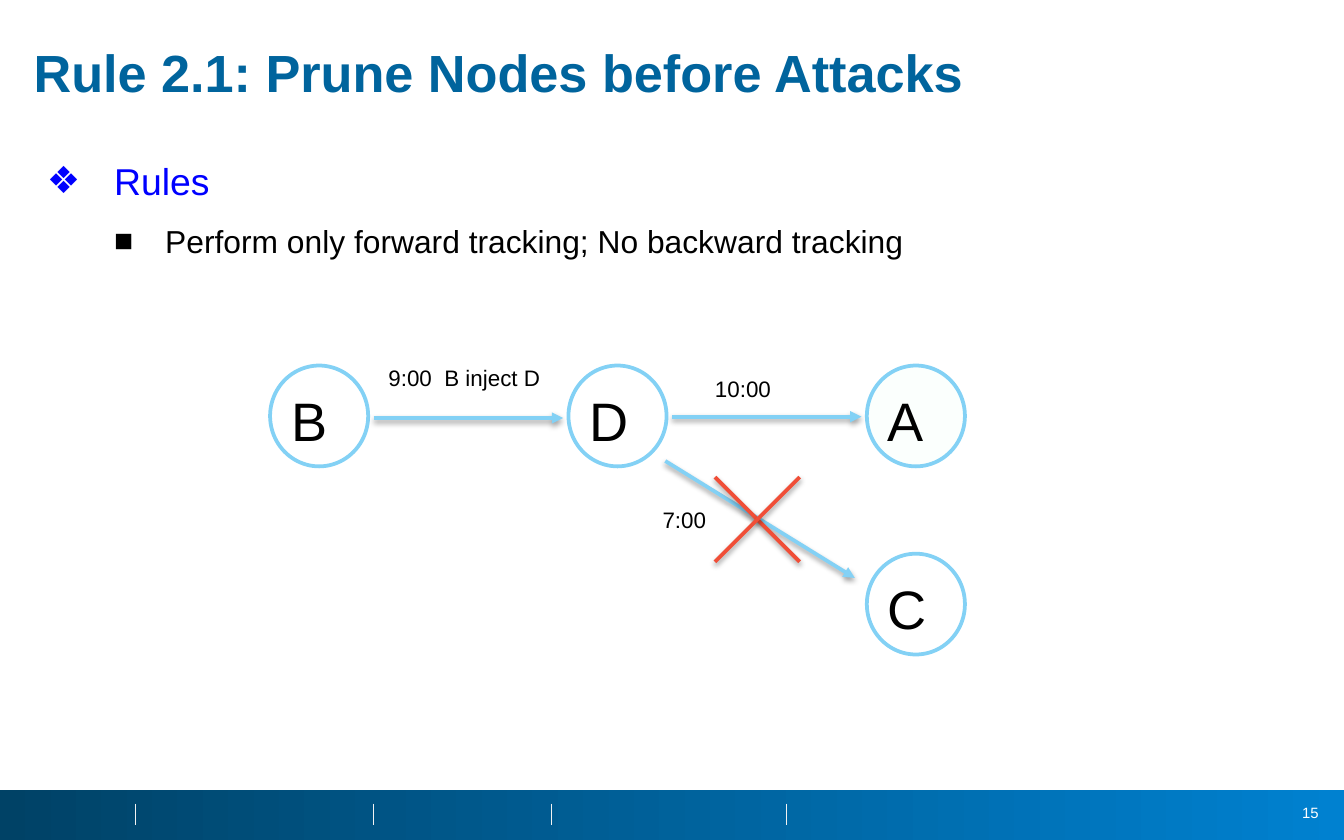
import pptx
import pptx.util
import pptx.oxml
import pptx.oxml.ns
import pptx.dml.color
import pptx.enum.dml
import pptx.enum.shapes
import pptx.enum.text
from lxml import etree

Inches = pptx.util.Inches
Pt = pptx.util.Pt
SHAPE = pptx.enum.shapes.MSO_SHAPE
ALIGN = pptx.enum.text.PP_ALIGN
ANCHOR = pptx.enum.text.MSO_ANCHOR
qn = pptx.oxml.ns.qn

# Content
TITLE = "Rule 2.1: Prune Nodes before Attacks"
PAGE = "15"
# text, level, indent, hang, size, colour, bullet
RULES = [
    ("Rules", 0, 0.5, 0.5, 20, "0000FF", "❖"),
    ("Perform only forward tracking; No backward tracking",
     1, 0.88, 0.38, 17, "000000", "■"),
]
NODES = [("B", 2.01, 2.72, "FFFFFF"), ("D", 4.23, 2.72, "FFFFFF"),
         ("A", 6.45, 2.72, "FBFFFD"), ("C", 6.45, 4.12, "FFFFFF")]
EDGES = [(2.78, 3.11, 4.19, 3.11), (5, 3.1, 6.41, 3.1),
         (4.95, 3.43, 6.36, 4.3)]
TIMES = [("9:00  B inject D", 2.84, 2.66, 1.27),
         ("10:00", 5.27, 2.74, 0.73), ("7:00", 4.88, 3.72, 0.73)]
CROSS = [(5.32, 3.55, 5.95, 4.18), (5.95, 3.55, 5.32, 4.18)]
TICKS = [1.01, 2.78, 4.1, 5.85]
SKY, RED, PALE = "83D1F5", "F04E37", "F2F2F2"
WIDE, HIGH, BAR = 10, 6.25, 5.88
NODE_W, NODE_H = 0.73, 0.75

deck = pptx.Presentation()
deck.slide_width, deck.slide_height = Inches(WIDE), Inches(HIGH)
slide = deck.slides.add_slide(deck.slide_layouts[6])
shapes = slide.shapes


def paint(target, color):
    """Give a font or a fill a solid colour."""
    if hasattr(target, "solid"):
        target.solid()
        target = target.fore_color
    else:
        target = target.color
    target.rgb = pptx.dml.color.RGBColor.from_string(color)


def write(para, text, size=12, color="000000", bold=False,
          align=ALIGN.LEFT, gap=None):
    para.text = text
    para.alignment = align
    para.line_spacing = gap
    font = para.font
    font.name, font.size, font.bold = "Arial", Pt(size), bold
    paint(font, color)


def frame(shape, inset=0.05, top=0.05, anchor=ANCHOR.TOP, wrap=True):
    body = shape.text_frame
    body.margin_left = body.margin_right = body.margin_bottom = Inches(inset)
    body.margin_top = Inches(top)
    body.vertical_anchor, body.word_wrap = anchor, wrap
    return body


def box(x, y, w, h, **style):
    shape = shapes.add_textbox(Inches(x), Inches(y), Inches(w), Inches(h))
    return frame(shape, **style)


def line(x1, y1, x2, y2, color, width=2, head=False, shade=True):
    link = shapes.add_connector(pptx.enum.shapes.MSO_CONNECTOR.STRAIGHT,
                                Inches(x1), Inches(y1), Inches(x2), Inches(y2))
    paint(link.line.fill, color)
    link.line.width = Pt(width)
    if head:
        etree.SubElement(link.line._get_or_add_ln(), qn("a:tailEnd"),
                         type="triangle")
    fx = etree.SubElement(link._element.spPr, qn("a:effectLst"))
    if shade:
        cast = etree.SubElement(fx, qn("a:outerShdw"), blurRad=str(Pt(3)),
                                dist=str(Pt(1.6)), dir="5400000",
                                rotWithShape="0")
        tone = etree.SubElement(cast, qn("a:srgbClr"), val="000000")
        etree.SubElement(tone, qn("a:alpha"), val="38000")


def bullet(para, mark, color, left, hang):
    props = para._p.get_or_add_pPr()
    props.set("marL", str(Inches(left)))
    props.set("indent", str(-Inches(hang)))
    tint = etree.SubElement(props, qn("a:buClr"))
    etree.SubElement(tint, qn("a:srgbClr"), val=color)
    etree.SubElement(props, qn("a:buFont"), typeface="Arial")
    etree.SubElement(props, qn("a:buChar"), char=mark)


# Footer bar, ticks and page number
bar = shapes.add_shape(SHAPE.RECTANGLE, 0, Inches(BAR), Inches(WIDE),
                       Inches(HIGH - BAR))
bar.shadow.inherit = False
bar.line.fill.background()
bar.fill.gradient()
bar.fill.gradient_angle = 0
for stop, color in zip(bar.fill.gradient_stops, ("004266", "0081D0")):
    stop.color.rgb = pptx.dml.color.RGBColor.from_string(color)
for x in TICKS:
    line(x, 5.98, x, 6.14, PALE, width=0.25, shade=False)
page = box(9.49, 5.95, 0.42, 0.24, inset=0.1, anchor=ANCHOR.MIDDLE)
write(page.paragraphs[0], PAGE, size=8, color="FFFFFF", align=ALIGN.RIGHT)

# Title
head = box(0.2, 0.3, 9.59, 0.62)
write(head.paragraphs[0], TITLE, size=28, color="00649D", bold=True, gap=0.9)

# Nodes
for name, x, y, color in NODES:
    node = shapes.add_shape(SHAPE.OVAL, Inches(x), Inches(y),
                            Inches(NODE_W), Inches(NODE_H))
    node.shadow.inherit = False
    paint(node.fill, color)
    paint(node.line.fill, SKY)
    node.line.width = Pt(2)
    write(frame(node).paragraphs[0], name, size=29)

# Edges, times and the cross over the pruned edge
for edge in EDGES:
    line(*edge, SKY, head=True)
for text, x, y, w in TIMES:
    write(box(x, y, w, 0.29).paragraphs[0], text)
for stroke in CROSS:
    line(*stroke, RED)

# Rules
body = box(0.3, 0.96, 6.53, 1.04, wrap=False)
for i, (text, level, left, hang, size, color, mark) in enumerate(RULES):
    para = body.add_paragraph() if i else body.paragraphs[0]
    para.level = level
    bullet(para, mark, color, left, hang)
    write(para, text, size=size, color=color, gap=1.5)

deck.save("out.pptx")
